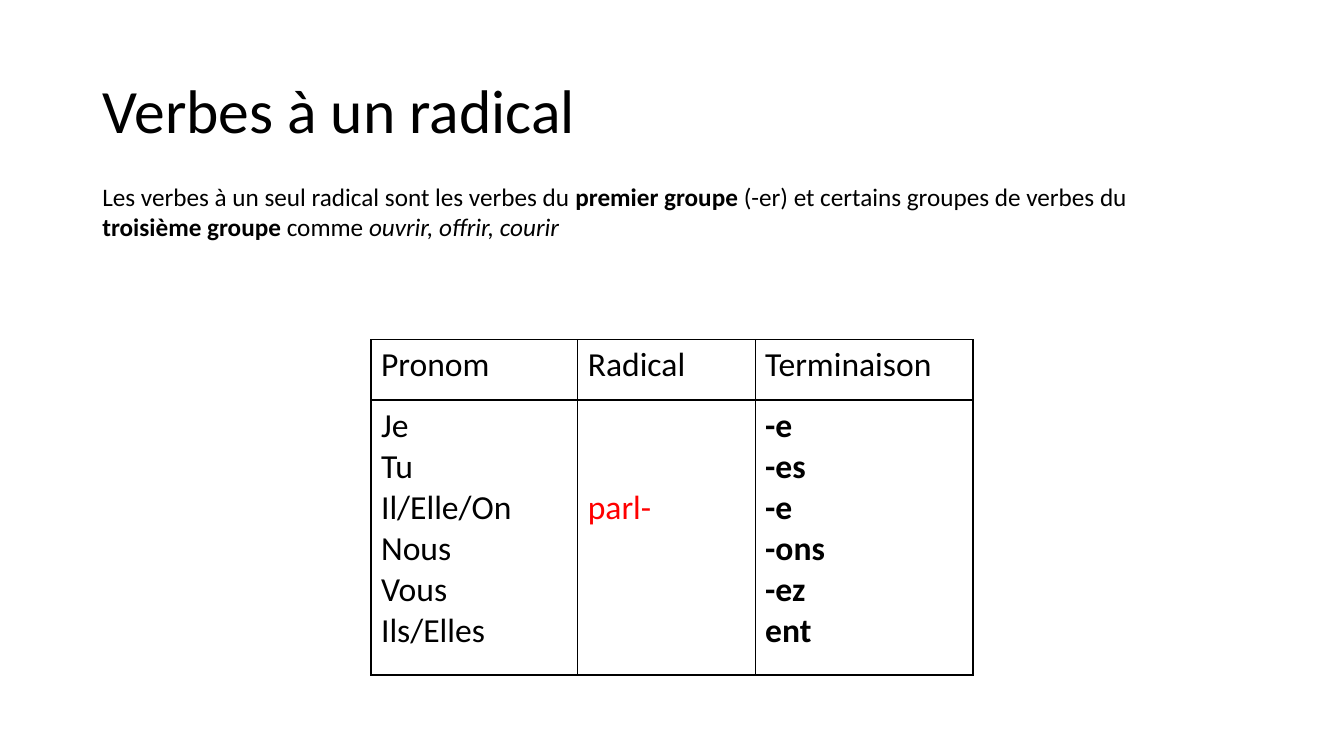
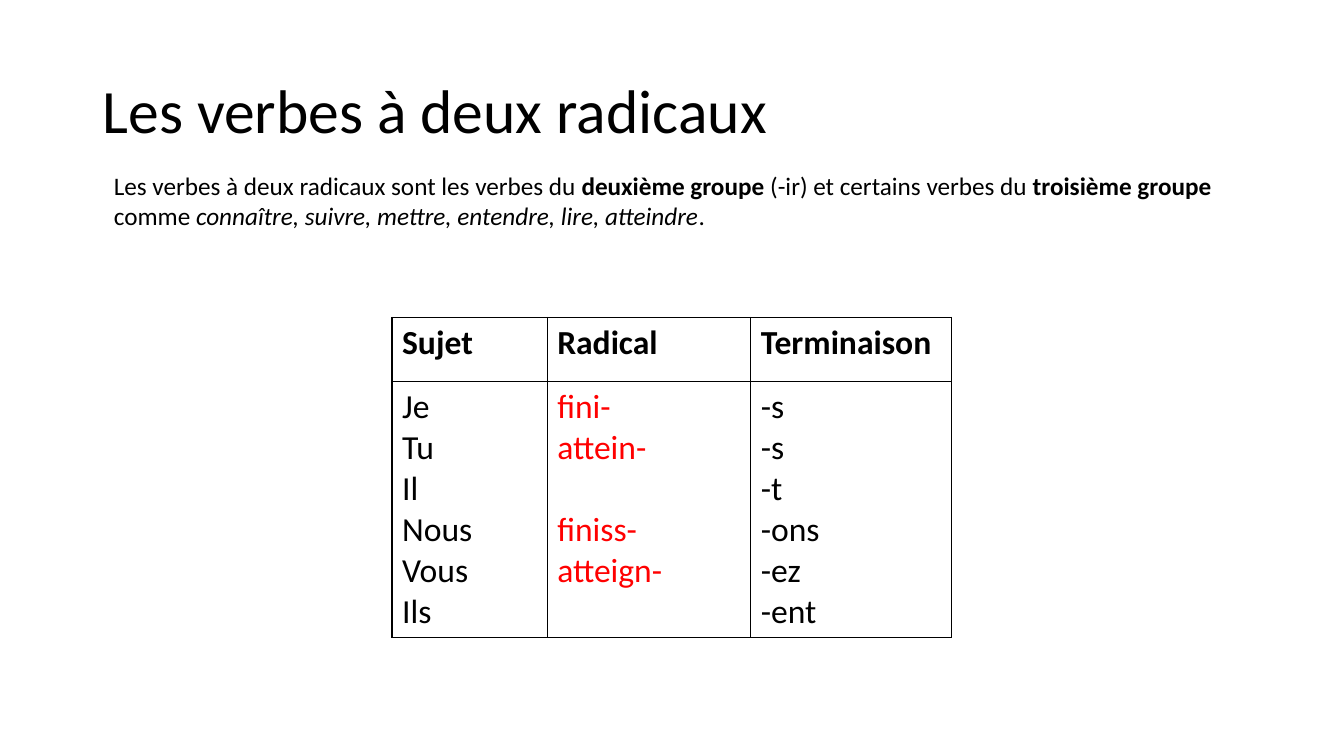
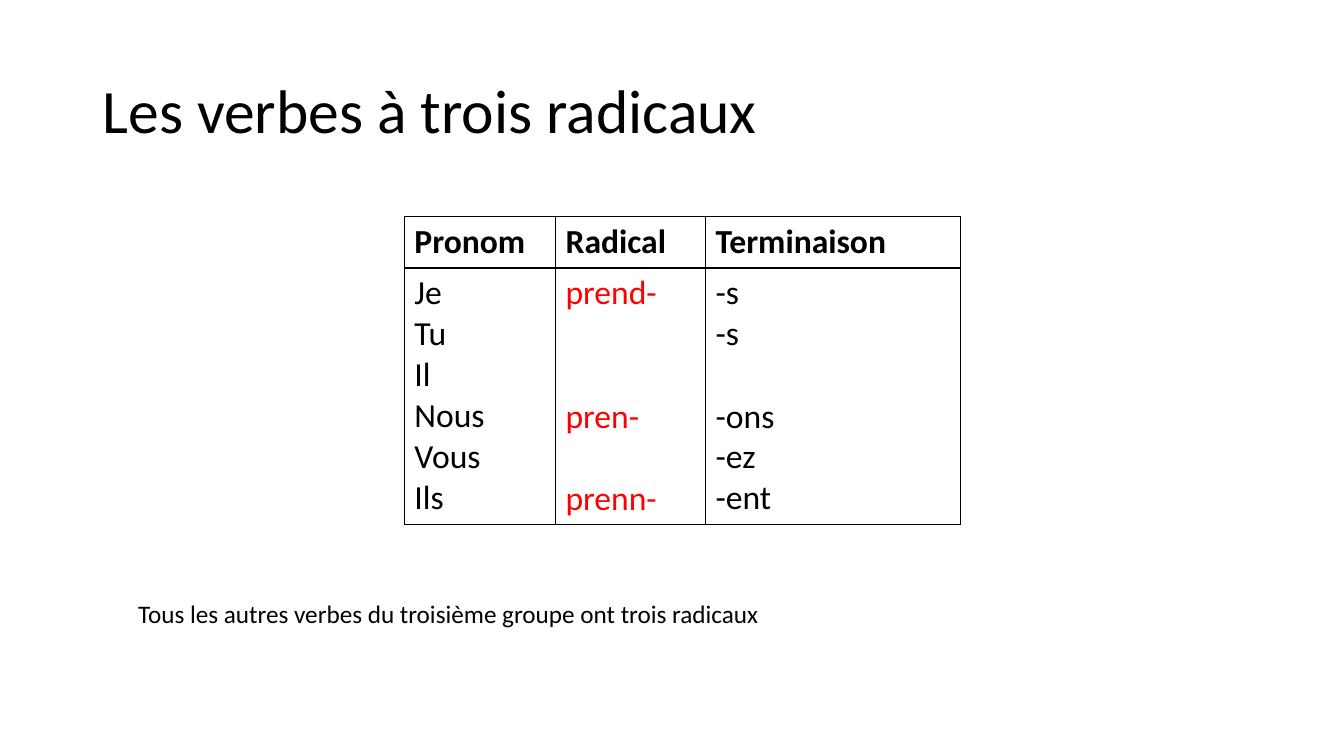
import pptx
import pptx.util
import pptx.dml.color
import pptx.enum.text
import pptx.oxml
import pptx.oxml.ns

Cm = pptx.util.Cm
Pt = pptx.util.Pt

COLORS = {"text": "000000", "stem": "FF0000", "border": "000000"}
FONT = "Calibri"
TITLE_BOX = (2.33, 1.02, 29.21, 3.68)
CELL_MARGIN = Cm(0.13)
BLANK_LINE = Pt(29.3)
GAP = None

STYLES = {
    "title": {"size": Pt(44)},
    "note": {"size": Pt(18)},
    "note_bold": {"size": Pt(18), "bold": True},
    "note_italic": {"size": Pt(18), "italic": True},
    "cell": {"size": Pt(24)},
    "cell_bold": {"size": Pt(24), "bold": True},
    "stem": {"size": Pt(24)},
}

TITLE_FRAME = {
    "word_wrap": True,
    "auto_size": pptx.enum.text.MSO_AUTO_SIZE.NONE,
    "vertical_anchor": pptx.enum.text.MSO_ANCHOR.MIDDLE,
}
TITLE_PARAGRAPH = {"alignment": pptx.enum.text.PP_ALIGN.LEFT, "line_spacing": 0.9}
NOTE_FRAME = {
    "word_wrap": True,
    "auto_size": pptx.enum.text.MSO_AUTO_SIZE.SHAPE_TO_FIT_TEXT,
}
PLAIN_TABLE = {"first_row": False, "horz_banding": False}

SLIDES = [
    {
        "title": "Verbes à un radical",
        "note_box": (2.33, 4.45, 28.45, 1.8),
        "note": [
            ("Les verbes à un seul radical sont les verbes du ", "note"),
            ("premier groupe ", "note_bold"),
            ("(-er) et certains groupes de verbes du ", "note"),
            ("troisième groupe ", "note_bold"),
            ("comme ", "note"),
            ("ouvrir, offrir, courir", "note_italic"),
        ],
        "table_corner": (9.35, 8.56),
        "columns": (5.21, 4.47, 5.49),
        "rows": (1.52, 6.93),
        "headings": ("Pronom", "Radical", "Terminaison"),
        "heading_style": "cell",
        "lines": (
            ["Je", "Tu", "Il/Elle/On", "Nous", "Vous", "Ils/Elles"],
            [GAP, GAP, "parl-"],
            ["-e", "-es", "-e", "-ons", "-ez", "ent"],
        ),
        "line_styles": ("cell", "stem", "cell_bold"),
    },
    {
        "title": "Les verbes à deux radicaux",
        "note_box": (2.62, 4.17, 28.93, 1.8),
        "note": [
            ("Les verbes à deux radicaux sont les verbes du ", "note"),
            ("deuxième groupe ", "note_bold"),
            ("(-ir) et certains verbes du ", "note"),
            ("troisième groupe ", "note_bold"),
            ("comme ", "note"),
            ("connaître, suivre, mettre, entendre, lire, atteindre", "note_italic"),
            (".", "note"),
        ],
        "table_corner": (9.88, 8),
        "columns": (3.91, 5.13, 5.05),
        "rows": (1.61, 6.45),
        "headings": ("Sujet", "Radical", "Terminaison"),
        "heading_style": "cell_bold",
        "lines": (
            ["Je", "Tu", "Il", "Nous", "Vous", "Ils"],
            ["fini-", "attein-", GAP, "finiss-", "atteign-"],
            ["-s", "-s", "-t", "-ons", "-ez", "-ent"],
        ),
        "line_styles": ("cell", "stem", "cell"),
    },
    {
        "title": "Les verbes à trois radicaux",
        "note_box": (3.23, 14.96, 27.43, 1.02),
        "note": [
            ("Tous les autres verbes du troisième groupe ont trois radicaux", "note"),
        ],
        "table_corner": (10.19, 5.46),
        "columns": (3.81, 3.78, 6.43),
        "rows": (1.27, 6.45),
        "headings": ("Pronom", "Radical", "Terminaison"),
        "heading_style": "cell_bold",
        "lines": (
            ["Je", "Tu", "Il", "Nous", "Vous", "Ils"],
            ["prend-", GAP, GAP, "pren-", GAP, "prenn-"],
            ["-s", "-s", GAP, "-ons", "-ez", "-ent"],
        ),
        "line_styles": ("cell", "stem", "cell"),
    },
]


def apply_format(target, values):
    for name, value in values.items():
        setattr(target, name, value)


def add_run(paragraph, text, style):
    run = paragraph.add_run()
    run.text = text
    apply_format(run.font, {"name": FONT, **STYLES[style]})
    color = COLORS.get(style, COLORS["text"])
    run.font.color.rgb = pptx.dml.color.RGBColor.from_string(color)


def add_title(slide, text):
    title = slide.shapes.title
    box = (Cm(length) for length in TITLE_BOX)
    apply_format(title, dict(zip(("left", "top", "width", "height"), box)))
    apply_format(title.text_frame, TITLE_FRAME)
    paragraph = title.text_frame.paragraphs[0]
    apply_format(paragraph, TITLE_PARAGRAPH)
    add_run(paragraph, text, "title")


def add_note(slide, box, runs):
    note = slide.shapes.add_textbox(*(Cm(length) for length in box))
    apply_format(note.text_frame, NOTE_FRAME)
    for text, style in runs:
        add_run(note.text_frame.paragraphs[0], text, style)


def add_borders(cell):
    properties = cell._tc.get_or_add_tcPr()
    for side in ("lnL", "lnR", "lnT", "lnB"):
        properties.append(pptx.oxml.parse_xml(
            f'<a:{side} {pptx.oxml.ns.nsdecls("a")} w="{Pt(1)}"><a:solidFill>'
            f'<a:srgbClr val="{COLORS["border"]}"/></a:solidFill></a:{side}>'
        ))


def fill_cell(cell, lines, style):
    add_borders(cell)
    cell.fill.background()
    cell.margin_top = CELL_MARGIN
    frame = cell.text_frame
    paragraph = None
    blanks = 0
    for text in lines:
        if text is GAP:
            blanks += 1
            continue
        if paragraph is None:
            paragraph = frame.paragraphs[0]
            cell.margin_top = CELL_MARGIN + blanks * BLANK_LINE
        else:
            paragraph = frame.add_paragraph()
            if blanks:
                paragraph.space_before = blanks * BLANK_LINE
        add_run(paragraph, text, style)
        blanks = 0


def add_conjugation(slide, content):
    columns, rows = content["columns"], content["rows"]
    lengths = (*content["table_corner"], sum(columns), sum(rows))
    table = slide.shapes.add_table(
        len(rows), len(columns), *(Cm(length) for length in lengths)
    ).table
    apply_format(table, PLAIN_TABLE)
    for row, height in zip(table.rows, rows):
        row.height = Cm(height)
    for index, width in enumerate(columns):
        table.columns[index].width = Cm(width)
        fill_cell(table.cell(0, index), [content["headings"][index]], content["heading_style"])
        fill_cell(table.cell(1, index), content["lines"][index], content["line_styles"][index])


def main():
    presentation = pptx.Presentation()
    apply_format(presentation, {"slide_width": Cm(33.87), "slide_height": Cm(19.05)})
    title_only = presentation.slide_layouts.get_by_name("Title Only")
    for content in SLIDES:
        slide = presentation.slides.add_slide(title_only)
        add_title(slide, content["title"])
        add_conjugation(slide, content)
        add_note(slide, content["note_box"], content["note"])
    presentation.save("out.pptx")


if __name__ == "__main__":
    main()
